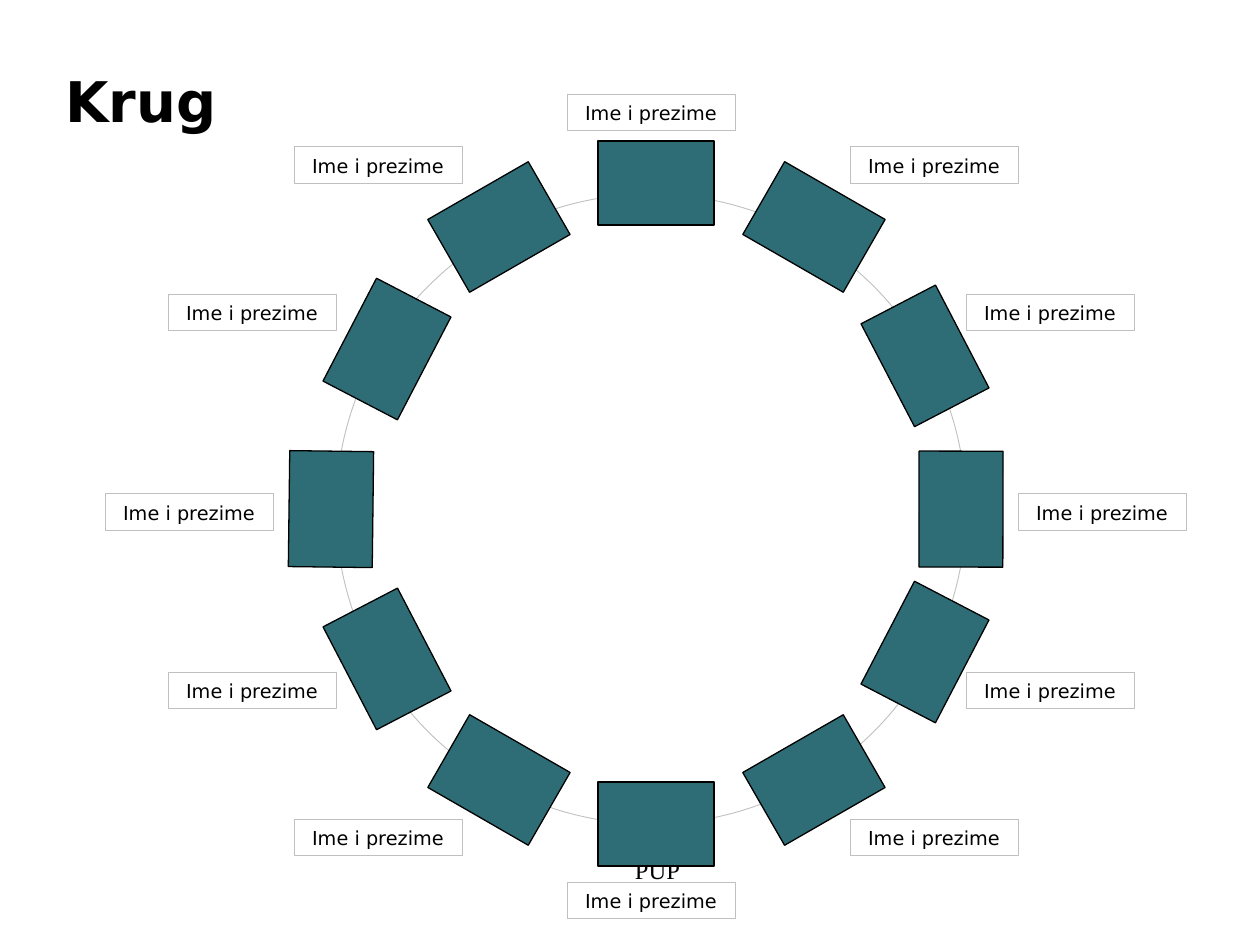
from pptx import Presentation
from pptx.dml.color import RGBColor
from pptx.enum.shapes import MSO_SHAPE
from pptx.enum.text import MSO_ANCHOR, MSO_AUTO_SIZE, PP_ALIGN
from pptx.util import Pt

EMU_PER_PX = 914400 / 126
BLACK = RGBColor(0x00, 0x00, 0x00)
WHITE = RGBColor(0xFF, 0xFF, 0xFF)
GRAY = RGBColor(0xC0, 0xC0, 0xC0)
TEAL = RGBColor(0x2E, 0x6D, 0x76)
SANS = "DejaVu Sans"
SERIF = "Times New Roman"

DESK_W, DESK_H = 116, 84
LABEL_W, LABEL_H = 168, 37

# Clockwise from the top: desk left, top, rotation; label left, top
SEATS = [
    (598, 141, 0, 567, 94),
    (756, 185, 29.9, 850, 147),
    (867, 314, 62.5, 966, 294),
    (903, 467, 270.1, 1018, 494),
    (867, 610, 297.5, 966, 672),
    (756, 738, 330.1, 850, 819),
    (598, 782, 0, 567, 882),
    (441, 738, 29.9, 294, 819),
    (329, 617, 62.5, 168, 672),
    (273, 467, 270.7, 105, 494),
    (329, 307, 297.5, 168, 294),
    (441, 185, 330.1, 294, 147),
]


def px(n):
    return round(n * EMU_PER_PX)


def box(x, y, w, h):
    return px(x), px(y), px(w), px(h)


def write(tf, text, size, font, align, bold=False):
    p = tf.paragraphs[0]
    p.alignment = align
    r = p.add_run()
    r.text = text
    r.font.size = Pt(size)
    r.font.name = font
    r.font.bold = bold
    r.font.color.rgb = BLACK


def add_title(s, text):
    title = s.shapes.title
    title.left, title.top, title.width, title.height = box(53, 53, 1155, 95)
    title.text_frame.vertical_anchor = MSO_ANCHOR.MIDDLE
    write(title.text_frame, text, 32, SANS, PP_ALIGN.LEFT, bold=True)


def add_footer(s, text):
    tf = s.shapes.add_textbox(*box(432, 849, 451, 63)).text_frame
    tf.word_wrap = True
    write(tf, text, 14, SERIF, PP_ALIGN.CENTER)


def add_outlined(s, kind, frame, fill, line, width):
    """Add a shape with a plain outline; a fill of None leaves it hollow."""
    sp = s.shapes.add_shape(kind, *box(*frame))
    sp.shadow.inherit = False
    if fill is None:
        sp.fill.background()
    else:
        sp.fill.solid()
        sp.fill.fore_color.rgb = fill
    sp.line.color.rgb = line
    sp.line.width = Pt(width)
    return sp


def add_desk(s, x, y, rotation):
    desk = add_outlined(s, MSO_SHAPE.RECTANGLE, (x, y, DESK_W, DESK_H),
                        TEAL, BLACK, 0.75)
    desk.rotation = rotation


def add_label(s, x, y, text):
    label = add_outlined(s, MSO_SHAPE.RECTANGLE, (x, y, LABEL_W, LABEL_H),
                         WHITE, GRAY, 0.5)
    tf = label.text_frame
    tf.word_wrap = True
    tf.auto_size = MSO_AUTO_SIZE.SHAPE_TO_FIT_TEXT
    tf.vertical_anchor = MSO_ANCHOR.MIDDLE
    write(tf, text, 11, SANS, PP_ALIGN.CENTER)


def main():
    prs = Presentation()
    prs.slide_width, prs.slide_height = px(1260), px(945)
    s = prs.slides.add_slide(prs.slide_layouts[5])
    add_title(s, "Krug")
    add_footer(s, "PUP")
    add_outlined(s, MSO_SHAPE.OVAL, (336, 194, 630, 630), None, GRAY, 0.5)
    for x, y, rotation, _, _ in SEATS:
        add_desk(s, x, y, rotation)
    for _, _, _, x, y in SEATS:
        add_label(s, x, y, "Ime i prezime")
    prs.save("out.pptx")


if __name__ == "__main__":
    main()
